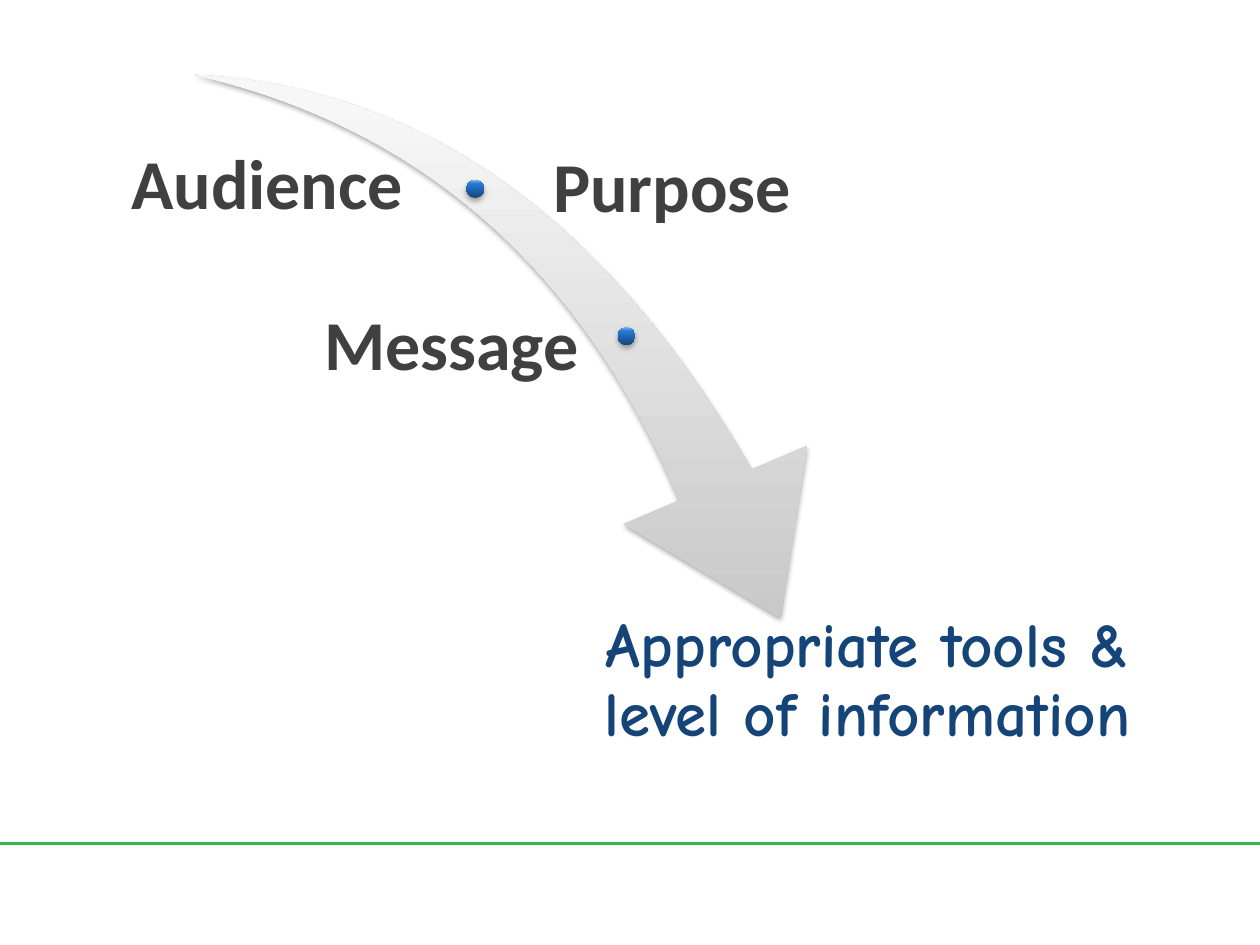
from lxml import etree
from pptx import Presentation
from pptx.dml.color import RGBColor
from pptx.enum.shapes import MSO_CONNECTOR, MSO_SHAPE
from pptx.enum.text import MSO_ANCHOR, PP_ALIGN
from pptx.oxml import parse_xml
from pptx.oxml.ns import nsdecls, qn
from pptx.util import Cm, Pt

ARROW, DOT = MSO_SHAPE.SWOOSH_ARROW, MSO_SHAPE.OVAL
LINE = MSO_CONNECTOR.STRAIGHT
TOP, MID, LOW = MSO_ANCHOR.TOP, MSO_ANCHOR.MIDDLE, MSO_ANCHOR.BOTTOM
LEFT, CENTER, RIGHT = PP_ALIGN.LEFT, PP_ALIGN.CENTER, PP_ALIGN.RIGHT

GREEN = RGBColor(0x39, 0xB5, 0x4A)
GRAY = RGBColor(0x40, 0x40, 0x40)
NAVY = RGBColor(0x15, 0x45, 0x78)
SILVER = RGBColor(0xBE, 0xBE, 0xBE)
PALE = RGBColor(0xF7, 0xF7, 0xF7)
WHITE = RGBColor(0xF8, 0xF8, 0xF8)
BLUE = RGBColor(0x25, 0x7B, 0xD6)
SKY = RGBColor(0x81, 0xB4, 0xE9)

GRAYS = ((0, SILVER), (80, PALE), (100, WHITE))
BLUES = ((0, NAVY), (80, BLUE), (100, SKY))

WIDE, HIGH = 25.4, 19.05
ROW = 2.57   # height of every text box
SIZE = 0.36  # diameter of a dot

SHADOW = (
    f'<a:outerShdw {nsdecls("a")} blurRad="40000" dist="23000" '
    'dir="5400000" rotWithShape="0"><a:srgbClr val="000000">'
    '<a:alpha val="35000"/></a:srgbClr></a:outerShdw>'
)


def shade(shape, stops):
    """Fill upwards through the stops, whatever the rotation."""
    shape.fill.gradient()
    grad = shape._element.spPr.find(qn("a:gradFill"))
    grad.set("rotWithShape", "0")
    grad.find(qn("a:lin")).set("ang", "16200000")
    items = grad.find(qn("a:gsLst"))
    for old in list(items):
        items.remove(old)
    for pos, color in stops:
        stop = etree.SubElement(items, qn("a:gs"), pos=str(pos * 1000))
        etree.SubElement(stop, qn("a:srgbClr"), val=str(color))


def add_form(slide, kind, x, y, w, h, stops):
    """Add a shaded shape with a soft shadow and no outline."""
    shape = slide.shapes.add_shape(kind, Cm(x), Cm(y), Cm(w), Cm(h))
    shade(shape, stops)
    shape.line.fill.background()
    shape.shadow.inherit = False
    effects = shape._element.spPr.find(qn("a:effectLst"))
    effects.append(parse_xml(SHADOW))
    return shape


def add_label(slide, text, x, y, w, align, anchor,
              face="Calibri", size=40, color=GRAY, inset=0.15):
    """Add a bold label."""
    frame = slide.shapes.add_textbox(Cm(x), Cm(y), Cm(w), Cm(ROW)).text_frame
    frame.word_wrap = True
    frame.vertical_anchor = anchor
    frame.margin_left = frame.margin_right = Cm(inset)
    frame.margin_top = frame.margin_bottom = Cm(inset)
    para = frame.paragraphs[0]
    para.text = text
    para.alignment = align
    para.line_spacing = 0.9
    font = para.font
    font.name, font.size, font.bold = face, Pt(size), True
    font.color.rgb = color


def add_rule(slide, y):
    """Add the line across the foot of the slide."""
    rule = slide.shapes.add_connector(LINE, 0, Cm(y), Cm(WIDE), Cm(y))
    rule.line.color.rgb = GREEN
    rule.line.width = Pt(1.5)
    etree.SubElement(rule._element.spPr, qn("a:effectLst"))


def main():
    deck = Presentation()
    deck.slide_width, deck.slide_height = Cm(WIDE), Cm(HIGH)
    slide = deck.slides.add_slide(deck.slide_layouts[6])

    add_rule(slide, 17)

    # Arrow with its two dots
    arrow = add_form(slide, ARROW, 3.61, 1.93, 13.89, 9.68, GRAYS)
    arrow.rotation = 73.3
    arrow.adjustments[0] = 0.163
    arrow.adjustments[1] = 0.314
    for x, y in ((9.4, 3.63), (12.45, 6.6)):
        add_form(slide, DOT, x, y, SIZE, SIZE, BLUES)

    # Labels along the arrow
    add_label(slide, "Audience", 2.11, 2.11, 6.55, CENTER, LOW)
    add_label(slide, "Purpose", 11, 2.54, 9.02, LEFT, MID)
    add_label(slide, "Message", 2.97, 5.72, 8.84, RIGHT, MID)

    # Outcome at the tip
    add_label(slide, "Appropriate tools & level of information",
              10.92, 12.24, 13.13, CENTER, TOP,
              face="Comic Neue", size=36, color=NAVY, inset=0.13)

    deck.save("out.pptx")


if __name__ == "__main__":
    main()
